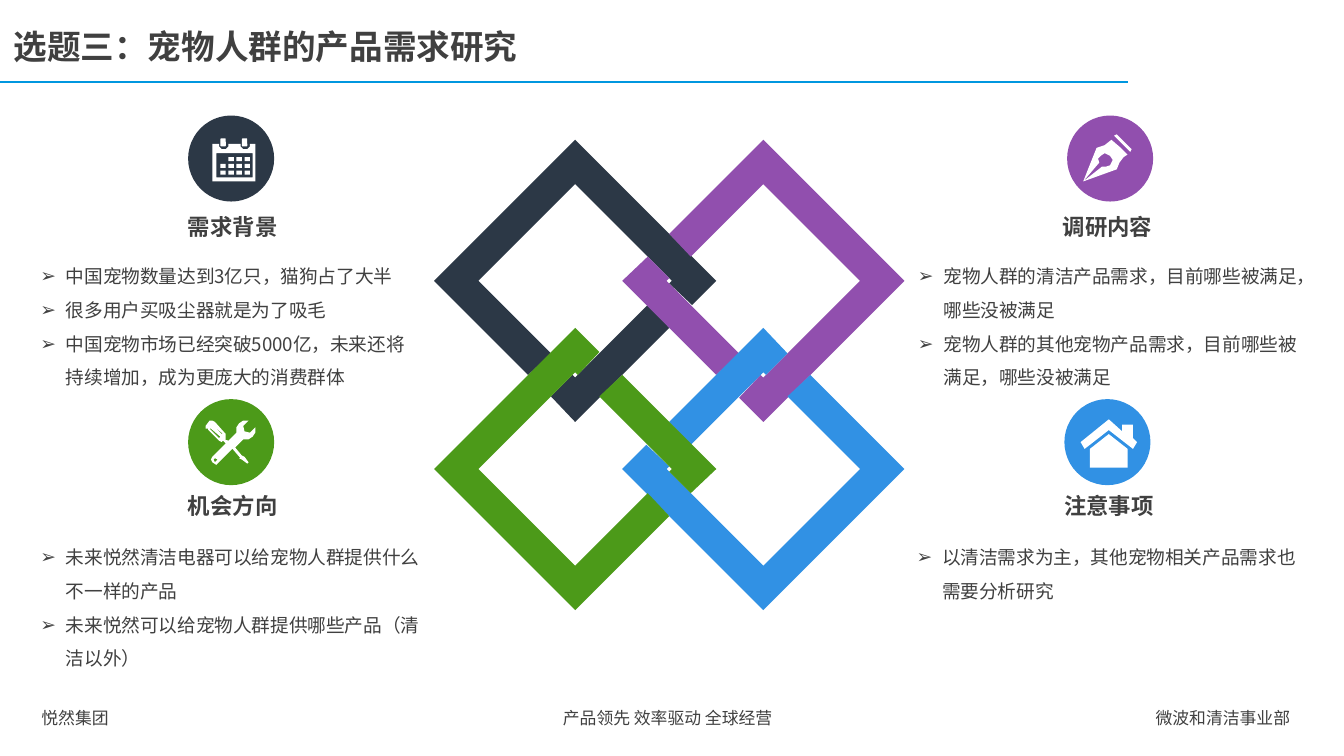
import lxml.etree
import pptx
import pptx.dml.color
import pptx.enum.shapes
import pptx.enum.text
import pptx.oxml.ns
import pptx.util

PX = 9144  # EMU per px, 100 px to the inch
FONT = "Noto Sans CJK SC"
TEXT, WHITE, RULE = "404040", "FFFFFF", "0097DF"
NAVY, PURPLE, BLUE, GREEN = "2C3846", "914FAE", "3191E4", "4C9A19"
SHAPE = pptx.enum.shapes.MSO_SHAPE


def px(n):
    return pptx.util.Emu(n * PX)


def rgb(value):
    return pptx.dml.color.RGBColor.from_string(value)


def child(parent, tag, **attrs):
    return lxml.etree.SubElement(parent, pptx.oxml.ns.qn(tag), attrs)


def write(p, text, size=10, bold=False, color=TEXT, spacing=1, bullet=None):
    """Fill a paragraph with one formatted run."""
    p.alignment = pptx.enum.text.PP_ALIGN.LEFT
    p.line_spacing = spacing
    p.space_before = p.space_after = pptx.util.Pt(0)
    pPr = p._p.get_or_add_pPr()
    indent = px(19) if bullet else 0
    pPr.set("marL", str(indent))
    pPr.set("indent", str(-indent))
    if bullet:
        child(pPr, "a:buChar", char=bullet)
    else:
        child(pPr, "a:buNone")
    r = p.add_run()
    r.text = text
    r.font.size, r.font.bold, r.font.name = pptx.util.Pt(size), bold, FONT
    r.font.color.rgb = rgb(color)
    child(r._r.get_or_add_rPr(), "a:ea", typeface=FONT)


class Deck:
    def __init__(self, width):
        self.prs = pptx.Presentation()
        self.prs.slide_width = px(width)
        self.prs.slide_height = px(width) * 9 // 16
        self.s = self.prs.slides.add_slide(self.prs.slide_layouts[4])

    def frame(self, sp, wrap):
        tf = sp.text_frame
        tf.word_wrap = wrap
        tf.auto_size = pptx.enum.text.MSO_AUTO_SIZE.NONE
        tf.vertical_anchor = pptx.enum.text.MSO_ANCHOR.TOP
        tf.margin_left = tf.margin_right = px(10)
        tf.margin_top = tf.margin_bottom = px(5)
        return tf

    def placeholder(self, idx, x, y, w, h, texts, wrap=True, **fmt):
        sp = self.s.placeholders[idx]
        sp.left, sp.top, sp.width, sp.height = map(px, (x, y, w, h))
        tf = self.frame(sp, wrap)
        for i, text in enumerate(texts):
            write(tf.add_paragraph() if i else tf.paragraphs[0], text, **fmt)

    def label(self, x, y, w, h, text, wrap=True, **fmt):
        sp = self.s.shapes.add_textbox(*map(px, (x, y, w, h)))
        write(self.frame(sp, wrap).paragraphs[0], text, **fmt)

    def paint(self, sp, color):
        sp.shadow.inherit = False
        sp.fill.solid()
        sp.fill.fore_color.rgb = rgb(color)
        sp.line.fill.background()

    def shape(self, kind, x, y, w, h, color=WHITE):
        self.paint(self.s.shapes.add_shape(kind, *map(px, (x, y, w, h))), color)

    def outline(self, contours, color=WHITE):
        fb = self.s.shapes.build_freeform(*contours[0][0], scale=PX)
        for i, points in enumerate(contours):
            if i:
                fb.move_to(*points[0])
            fb.add_line_segments(points[1:], close=True)
        self.paint(fb.convert_to_shape(), color)

    def rule(self, x1, y1, x2, y2, color, width):
        kind = pptx.enum.shapes.MSO_CONNECTOR.STRAIGHT
        line = self.s.shapes.add_connector(kind, *map(px, (x1, y1, x2, y2)))
        line.line.color.rgb = rgb(color)
        line.line.width = pptx.util.Pt(width)
        child(line._element.spPr, "a:effectLst")


def box(x1, y1, x2, y2):
    return [(x1, y1), (x2, y1), (x2, y2), (x1, y2)]


deck = Deck(1000)

# Title, rule and footer
deck.placeholder(0, 0, 14, 399, 40, ["选题三：宠物人群的产品需求研究"],
                 wrap=False, size=18, bold=True)
deck.rule(0, 61, 839, 61, RULE, 1)
for x, w, text in [(21, 73, "悦然集团"), (409, 193, "产品领先 效率驱动 全球经营"),
                   (850, 127, "微波和清洁事业部")]:
    deck.label(x, 522, w, 25, text, size=9)

# Interlocked rings: one outline, given a quarter turn each time
CENTER_X, CENTER_Y = 498, 279
ring = [
    [(35, -70), (17, -52), (0, -68), (2, -70), (-70, -142), (-142, -70),
     (-88, -16), (-105, 0), (-175, -70), (-70, -175)],
    [(-72, 0), (-88, 16), (-70, 35), (0, -35), (-16, -52), (-70, 2)],
]
for color in (NAVY, PURPLE, BLUE, GREEN):
    deck.outline([[(CENTER_X + x, CENTER_Y + y) for x, y in c] for c in ring], color)
    ring = [[(-y, x) for x, y in c] for c in ring]

# Four topics: badge, heading and list
topics = [
    (1, NAVY, (140, 86), (130, 154), "需求背景", (20, 184, 303, 111),
     ["中国宠物数量达到3亿只，猫狗占了大半", "很多用户买吸尘器就是为了吸毛",
      "中国宠物市场已经突破5000亿，未来还将持续增加，成为更庞大的消费群体"]),
    (2, PURPLE, (794, 86), (781, 154), "调研内容", (673, 184, 303, 111),
     ["宠物人群的清洁产品需求，目前哪些被满足，哪些没被满足",
      "宠物人群的其他宠物产品需求，目前哪些被满足，哪些没被满足"]),
    (3, GREEN, (140, 297), (130, 361), "机会方向", (20, 393, 303, 111),
     ["未来悦然清洁电器可以给宠物人群提供什么不一样的产品",
      "未来悦然可以给宠物人群提供哪些产品（清洁以外）"]),
    (4, BLUE, (792, 297), (782, 361), "注意事项", (672, 393, 303, 61),
     ["以清洁需求为主，其他宠物相关产品需求也需要分析研究"]),
]
for idx, color, badge, head, heading, area, items in topics:
    deck.shape(SHAPE.FLOWCHART_CONNECTOR, *badge, 64, 64, color)
    deck.label(*head, 88, 30, heading, wrap=False, size=12, bold=True)
    deck.placeholder(idx, *area, items, spacing=1.5, bullet="➢")

# Calendar icon
notches = [(x + dx, y) for x in (163, 179)
           for dx, y in [(0, 107), (0, 109), (2, 111), (5, 111), (7, 109), (7, 107)]]
deck.outline([[(158, 107), *notches, (190, 107), (190, 135), (158, 135)],
              box(161, 114, 188, 132)])
for x in (164, 180):
    deck.shape(SHAPE.ROUNDED_RECTANGLE, x, 103, 4, 6)
for row in range(3):
    for col in range(0 if row else 1, 4):
        deck.shape(SHAPE.RECTANGLE, 164 + 6 * col, 117 + 5 * row, 4, 3)

# Pen icon
deck.outline([[(834, 110), (827, 104), (822, 108), (816, 110), (806, 135),
               (818, 121), (817, 118), (819, 116), (822, 114), (826, 116),
               (828, 119), (826, 123), (823, 124), (820, 124), (806, 135),
               (831, 126), (833, 121), (836, 117), (839, 115)]])
deck.outline([[(831, 100), (842, 111), (841, 113), (829, 101)]])

# House icon
deck.outline([[(811, 334), (811, 348), (839, 348), (839, 334), (825, 323)]])
deck.outline([[(843, 326), (843, 316), (835, 316), (835, 321), (825, 312),
               (804, 329), (807, 334), (825, 320), (843, 334), (846, 329)]])

# Tools icon
deck.outline([
    [(153, 317), (156, 313), (158, 313), (160, 314), (168, 323), (168, 327),
     (167, 327), (170, 328), (176, 322), (176, 318), (178, 315), (181, 313),
     (185, 313), (181, 317), (182, 321), (186, 322), (190, 318), (190, 322),
     (188, 325), (185, 327), (181, 327), (175, 333), (180, 339), (182, 340),
     (185, 344), (184, 345), (180, 342), (178, 341), (179, 341), (173, 334),
     (163, 344), (161, 346), (158, 344), (157, 342), (158, 340), (168, 330),
     (166, 328), (165, 329), (163, 328), (155, 320), (155, 319), (153, 319)],
    [(160, 341), (159, 342), (160, 344), (162, 342)],
    [(165, 323), (166, 323), (159, 317)],
    [(163, 326), (164, 325), (157, 319), (156, 319)],
])

deck.prs.save("out.pptx")
